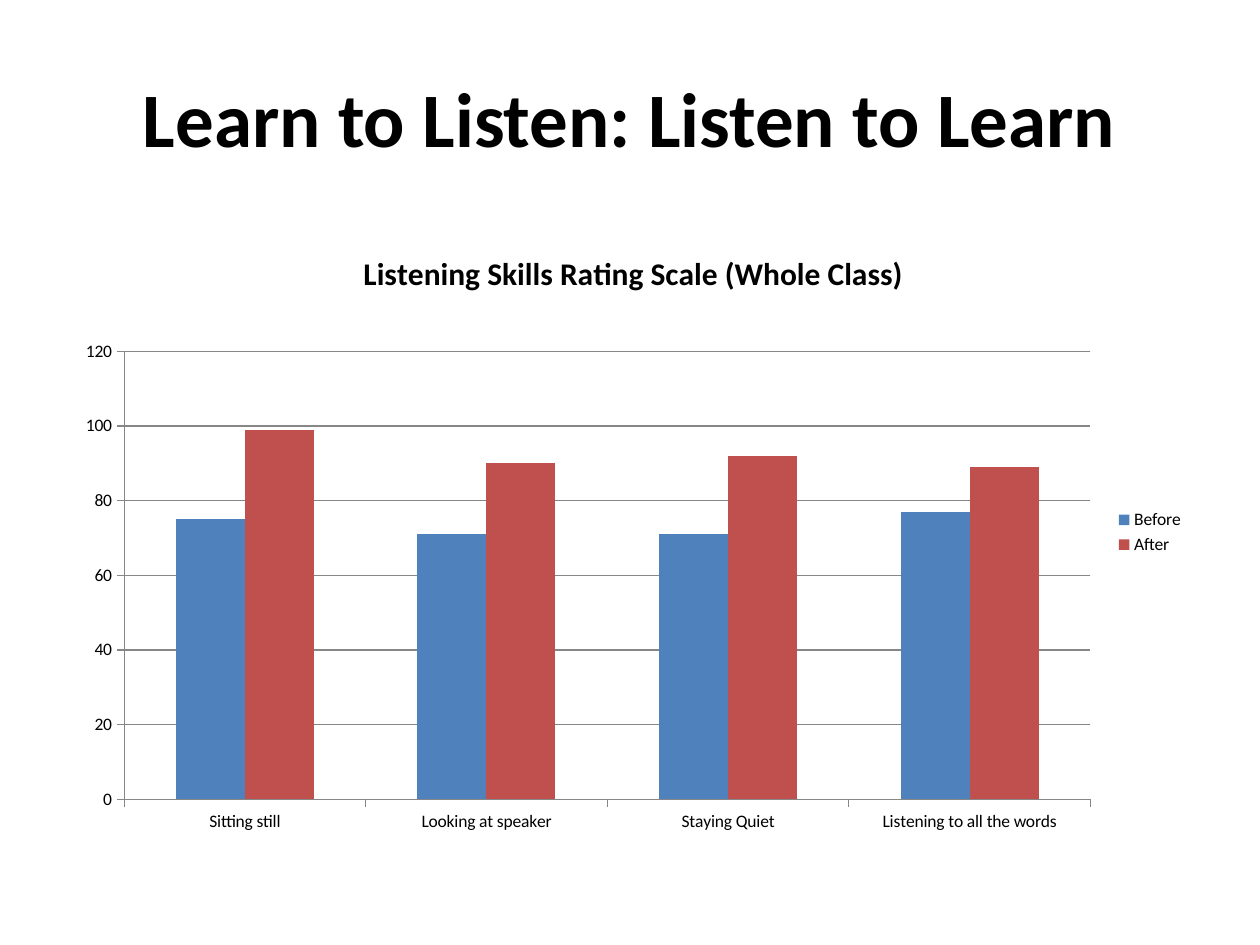
import pptx
import pptx.util
import pptx.dml.color
import pptx.chart.data
import pptx.enum.chart
import pptx.enum.text
import pptx.oxml
import pptx.oxml.ns

# Content
HEADING = "Learn to Listen: Listen to Learn"
CHART_TITLE = "Listening Skills Rating Scale (Whole Class)"
SKILLS = ["Sitting still", "Looking at speaker", "Staying Quiet", "Listening to all the words"]
RATINGS = {"Before": (75, 71, 71, 77), "After": (99, 90, 92, 89)}

# Format
COLORS = {"text": "000000", "line": "878787", "Before": "4F81BD", "After": "C0504D"}
PX = 9144  # EMU, 100 px to the inch
HEADING_BOX = (50, 30, 900, 125)
CHART_BOX = (50, 175, 900, 495)
TITLE_PLACE = {"x": 0.26, "y": 0.04}
PLOT_PLACE = {"x": 0.054, "y": 0.21, "w": 0.852, "h": 0.718}
TICKS = pptx.enum.chart.XL_TICK_MARK


def emu(box):
    return [pptx.util.Emu(length * PX) for length in box]


def rgb(name):
    return pptx.dml.color.RGBColor.from_string(COLORS[name])


def style(font, size, bold=False):
    for key, value in {"name": "Calibri", "size": pptx.util.Pt(size), "bold": bold}.items():
        setattr(font, key, value)
    font.color.rgb = rgb("text")


def place(part, index, fractions, inner=False):
    """Give a chart part a manual layout, in fractions of the chart."""
    for old in part.findall(pptx.oxml.ns.qn("c:layout")):
        part.remove(old)
    rules = '<c:layoutTarget val="inner"/>' if inner else ""
    rules += "".join(f'<c:{key}Mode val="edge"/>' for key in "xy")
    rules += "".join(f'<c:{key} val="{value}"/>' for key, value in fractions.items())
    part.insert(index, pptx.oxml.parse_xml(
        f'<c:layout {pptx.oxml.ns.nsdecls("c")}><c:manualLayout>{rules}</c:manualLayout></c:layout>'))


deck = pptx.Presentation()
deck.slide_width, deck.slide_height = emu((1000, 750))
slide = deck.slides.add_slide(deck.slide_layouts[5])

# Heading
heading = slide.shapes.title
heading.left, heading.top, heading.width, heading.height = emu(HEADING_BOX)
heading.text_frame.text = HEADING
heading.text_frame.vertical_anchor = pptx.enum.text.MSO_ANCHOR.MIDDLE
heading_line = heading.text_frame.paragraphs[0]
heading_line.alignment = pptx.enum.text.PP_ALIGN.CENTER
style(heading_line.runs[0].font, 44, True)

# Ratings chart
data = pptx.chart.data.CategoryChartData()
data.categories = SKILLS
for name, values in RATINGS.items():
    data.add_series(name, values)
chart = slide.shapes.add_chart(
    pptx.enum.chart.XL_CHART_TYPE.COLUMN_CLUSTERED, *emu(CHART_BOX), data).chart
style(chart.font, 10)

chart.has_title = True
chart.chart_title.text_frame.text = CHART_TITLE
style(chart.chart_title.text_frame.paragraphs[0].runs[0].font, 18, True)
chart.chart_title.include_in_layout = False

chart.has_legend = True
chart.legend.position = pptx.enum.chart.XL_LEGEND_POSITION.RIGHT
chart.legend.include_in_layout = False

# Columns
columns = chart.plots[0]
for key, value in {"gap_width": 150, "overlap": 0, "vary_by_categories": False}.items():
    setattr(columns, key, value)
for series in columns.series:
    series.format.fill.solid()
    series.format.fill.fore_color.rgb = rgb(series.name)

# Axes
rating_axis = chart.value_axis
for key, value in {"minimum_scale": 0, "maximum_scale": 120, "major_unit": 20,
                   "has_major_gridlines": True}.items():
    setattr(rating_axis, key, value)
for axis in (chart.category_axis, rating_axis):
    axis.major_tick_mark, axis.minor_tick_mark = TICKS.OUTSIDE, TICKS.NONE
for ruled in (chart.category_axis, rating_axis, rating_axis.major_gridlines):
    ruled.format.line.color.rgb = rgb("line")
    ruled.format.line.width = pptx.util.Pt(0.75)

# Places inside the chart
place(chart.chart_title._element, 1, TITLE_PLACE)
place(columns._element.getparent(), 0, PLOT_PLACE, inner=True)

deck.save("out.pptx")
